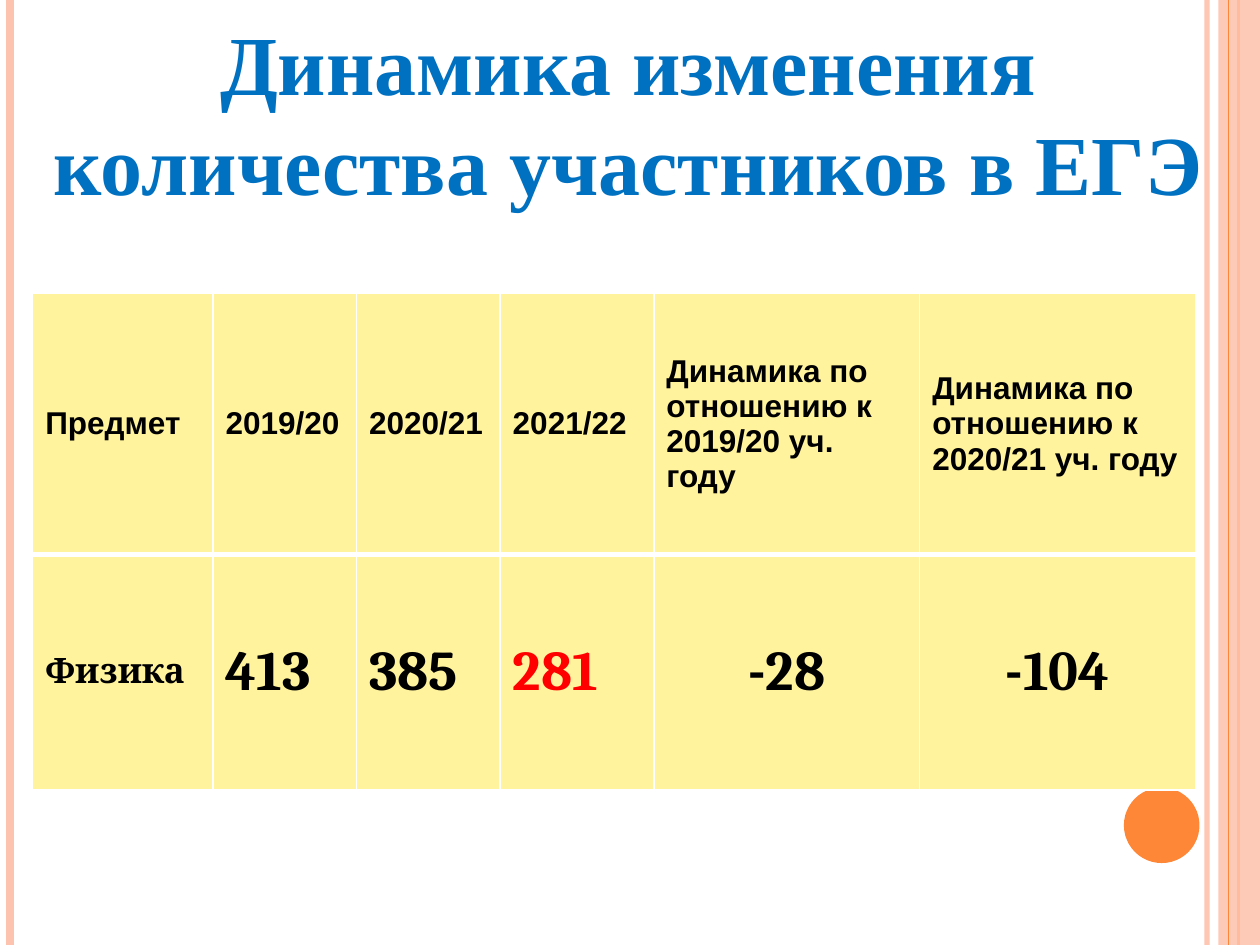
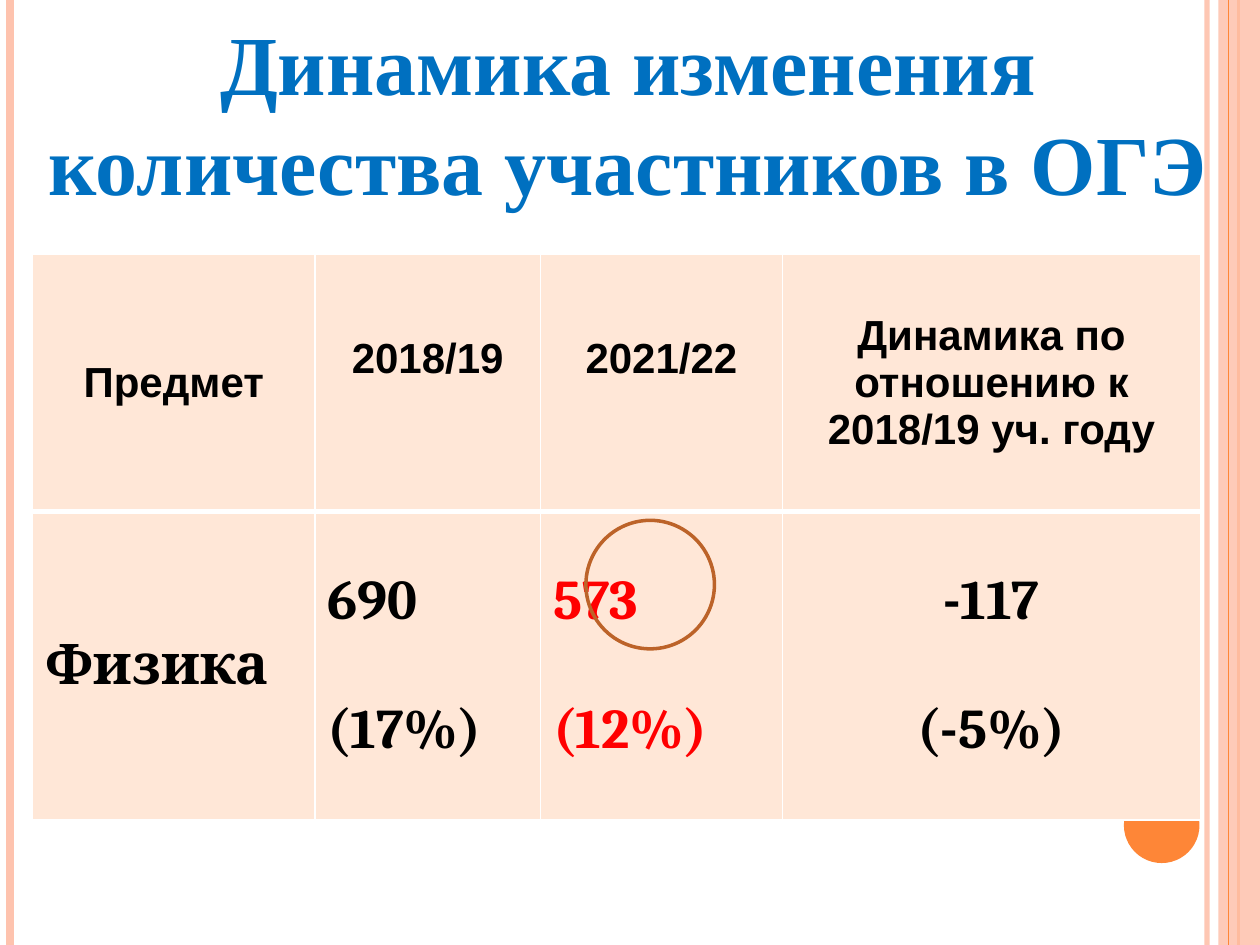
from dataclasses import dataclass, field

from lxml.etree import SubElement
from pptx import Presentation
from pptx.dml.color import RGBColor
from pptx.enum.shapes import MSO_CONNECTOR, MSO_SHAPE
from pptx.enum.text import MSO_ANCHOR, MSO_AUTO_SIZE, PP_ALIGN
from pptx.oxml.ns import qn
from pptx.util import Inches, Pt

WHITE = RGBColor(0xFF, 0xFF, 0xFF)
BLACK = RGBColor(0x00, 0x00, 0x00)
RED = RGBColor(0xFF, 0x00, 0x00)
BLUE = RGBColor(0x00, 0x70, 0xC0)
ORANGE = RGBColor(0xFE, 0x86, 0x37)
PEACH = RGBColor(0xFE, 0xC3, 0xAE)
BROWN = RGBColor(0xBC, 0x63, 0x29)
PALE_YELLOW = RGBColor(0xFF, 0xF3, 0x9D)
PALE_ORANGE = RGBColor(0xFF, 0xE7, 0xD7)

TITLE_FONT, HEADER_FONT, BODY_FONT = "Times New Roman", "Arial", "Cambria"
SLIDE_WIDTH, SLIDE_HEIGHT = Inches(10), Inches(7.5)
TITLE_ONLY_LAYOUT = 5
LEFT, CENTER = PP_ALIGN.LEFT, PP_ALIGN.CENTER


@dataclass(frozen=True)
class Stripe:
    x: float
    color: RGBColor
    width: float
    opacity: int = 100


@dataclass(frozen=True)
class CellText:
    text: str
    size: int
    font: str = BODY_FONT
    color: RGBColor = BLACK
    align: PP_ALIGN = LEFT
    bottom_margin: float = 0.05


@dataclass(frozen=True)
class TableSlide:
    title: str
    top: float
    columns: list[float]
    rows: list[float]
    fill: RGBColor
    cells: list[list[CellText]] = field(default_factory=list)


RAISED = 0.43  # bottom margin that lifts the year headings

STRIPES = [
    Stripe(9.58, PEACH, 3, 93),
    Stripe(0.08, PEACH, 4.5),
    Stripe(9.83, ORANGE, 1.5),
    Stripe(9.75, ORANGE, 0.75),
]

EGE = TableSlide(
    "Динамика изменения количества участников в ЕГЭ",
    2.33, [1.43, 1.14, 1.14, 1.22, 2.11, 2.19], [2.07, 1.87], PALE_YELLOW,
    [
        [CellText(text, 18, HEADER_FONT) for text in (
            "Предмет", "2019/20", "2020/21", "2021/22",
            "Динамика по отношению к 2019/20 уч. году",
            "Динамика по отношению к 2020/21 уч. году",
        )],
        [
            CellText("Физика", 20),
            CellText("413", 32),
            CellText("385", 32),
            CellText("281", 32, color=RED),
            CellText("-28", 32, align=CENTER),
            CellText("-104", 32, align=CENTER),
        ],
    ],
)

OGE = TableSlide(
    "Динамика изменения количества участников в ОГЭ",
    2.02, [2.24, 1.79, 1.92, 3.32], [2.04, 2.45], PALE_ORANGE,
    [
        [CellText(text, 24, HEADER_FONT, align=CENTER, bottom_margin=margin)
         for text, margin in (
             ("Предмет", 0.05), ("2018/19", RAISED), ("2021/22", RAISED),
             ("Динамика по отношению к 2018/19 уч. году", 0.05),
         )],
        [
            CellText("Физика", 32),
            CellText("690\n(17%)", 32),
            CellText("573\n(12%)", 32, color=RED),
            CellText("-117\n(-5%)", 32, align=CENTER),
        ],
    ],
)


def set_opacity(shape, percent: int) -> None:
    for color in shape.element.spPr.iter(qn("a:srgbClr")):
        SubElement(color, qn("a:alpha"), val=str(percent * 1000))


def add_stripe(slide, stripe: Stripe) -> None:
    x = Inches(stripe.x)
    line = slide.shapes.add_connector(MSO_CONNECTOR.STRAIGHT, x, 0, x, SLIDE_HEIGHT)
    line.line.color.rgb = stripe.color
    line.line.width = Pt(stripe.width)
    SubElement(line.element.spPr, qn("a:effectLst"))
    if stripe.opacity < 100:
        set_opacity(line, stripe.opacity)


def add_plain_shape(slide, kind: MSO_SHAPE, left: float, top: float,
                    width: float, height: float, fill: RGBColor | None = None):
    shape = slide.shapes.add_shape(
        kind, Inches(left), Inches(top), Inches(width), Inches(height))
    shape.shadow.inherit = False
    shape.line.fill.background()
    if fill is None:
        shape.fill.background()
    else:
        shape.fill.solid()
        shape.fill.fore_color.rgb = fill
    return shape


def add_decoration(slide) -> None:
    for stripe in STRIPES[:3]:
        add_stripe(slide, stripe)
    band = add_plain_shape(slide, MSO_SHAPE.RECTANGLE, 9.67, 0, 0.33, 7.5, PEACH)
    set_opacity(band, 87)
    add_stripe(slide, STRIPES[3])
    add_plain_shape(slide, MSO_SHAPE.OVAL, 8.92, 6.25, 0.6, 0.6, ORANGE)


def format_paragraph(paragraph, font: str, size: int, color: RGBColor,
                     align: PP_ALIGN) -> None:
    paragraph.alignment = align
    for run in paragraph.runs:
        run.font.name = font
        run.font.size = Pt(size)
        run.font.bold = True
        run.font.color.rgb = color


def set_title(slide, text: str) -> None:
    title = slide.shapes.title
    title.left, title.top = Inches(0.26), Inches(0)
    title.width, title.height = Inches(9.45), Inches(1.72)
    frame = title.text_frame
    frame.text = text
    frame.word_wrap = True
    frame.auto_size = MSO_AUTO_SIZE.NONE
    frame.vertical_anchor = MSO_ANCHOR.TOP
    frame.margin_top, frame.margin_bottom = Inches(0.1), Inches(0.04)
    paragraph = frame.paragraphs[0]
    paragraph.line_spacing = Pt(57)
    format_paragraph(paragraph, TITLE_FONT, 48, BLUE, CENTER)
    # Bring the title in front of the stripes
    title.element.getparent().append(title.element)


def set_borders(cell, top: float, bottom: float) -> None:
    properties = cell._tc.get_or_add_tcPr()
    for side, width in (("L", 1), ("R", 1), ("T", top), ("B", bottom)):
        line = SubElement(properties, qn(f"a:ln{side}"), w=str(Pt(width)))
        solid = SubElement(line, qn("a:solidFill"))
        SubElement(solid, qn("a:srgbClr"), val=str(WHITE))


def fill_cell(cell, content: CellText, fill: RGBColor) -> None:
    cell.fill.solid()
    cell.fill.fore_color.rgb = fill
    cell.vertical_anchor = MSO_ANCHOR.MIDDLE
    cell.margin_bottom = Inches(content.bottom_margin)
    cell.text_frame.text = content.text
    for index, paragraph in enumerate(cell.text_frame.paragraphs):
        format_paragraph(paragraph, content.font, content.size,
                         content.color, content.align)
        if index:
            paragraph.space_before = Pt(37)


def add_data_table(slide, data: TableSlide) -> None:
    table = slide.shapes.add_table(
        len(data.rows), len(data.columns), Inches(0.26), Inches(data.top),
        Inches(sum(data.columns)), Inches(sum(data.rows))).table
    table.horz_banding = False
    for column, width in zip(table.columns, data.columns):
        column.width = Inches(width)
    for row_index, (row, height) in enumerate(zip(table.rows, data.rows)):
        row.height = Inches(height)
        top, bottom = (1, 3) if row_index == 0 else (3, 1)
        for cell, content in zip(row.cells, data.cells[row_index]):
            set_borders(cell, top, bottom)
            fill_cell(cell, content, data.fill)


def add_table_slide(presentation, data: TableSlide):
    slide = presentation.slides.add_slide(
        presentation.slide_layouts[TITLE_ONLY_LAYOUT])
    add_decoration(slide)
    set_title(slide, data.title)
    add_data_table(slide, data)
    return slide


def main() -> None:
    presentation = Presentation()
    presentation.slide_width, presentation.slide_height = SLIDE_WIDTH, SLIDE_HEIGHT

    add_table_slide(presentation, EGE)
    oge_slide = add_table_slide(presentation, OGE)

    # Ring around the latest result
    ring = add_plain_shape(oge_slide, MSO_SHAPE.OVAL, 4.65, 4.13, 1.02, 1.02)
    ring.line.color.rgb = BROWN
    ring.line.width = Pt(2)

    presentation.save("out.pptx")


if __name__ == "__main__":
    main()
